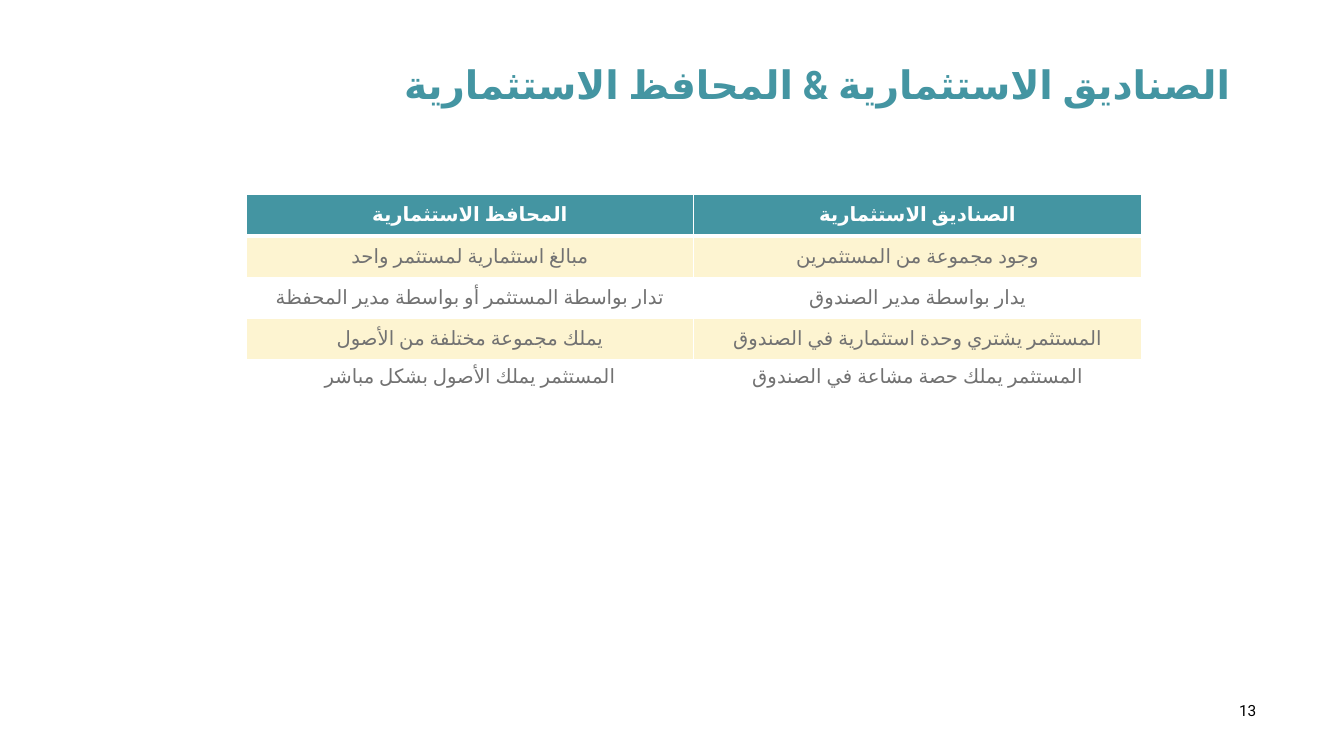
from dataclasses import dataclass

from lxml import etree
from pptx import Presentation
from pptx import util as u
from pptx.dml import color
from pptx.enum import lang, text as t
from pptx.oxml import ns


@dataclass(frozen=True)
class Theme:
    font: str = "Roboto"
    teal: str = "4495A2"
    gold: str = "F9D448"
    white: str = "FFFFFF"
    gray: str = "727272"
    black: str = "000000"
    title: int = 28
    body: int = 14
    small: int = 11


THEME = Theme()
ROWS = [
    ("المحافظ الاستثمارية", "الصناديق الاستثمارية"),
    ("مبالغ استثمارية لمستثمر واحد", "وجود مجموعة من المستثمرين"),
    ("تدار بواسطة المستثمر أو بواسطة مدير المحفظة", "يدار بواسطة مدير الصندوق"),
    ("يملك مجموعة مختلفة من الأصول", "المستثمر يشتري وحدة استثمارية في الصندوق"),
    ("المستثمر يملك الأصول بشكل مباشر", "المستثمر يملك حصة مشاعة في الصندوق"),
]
HEIGHTS = [0.41] * 4 + [0.32]


def apply(item, form):
    for name, value in form.items():
        setattr(item, name, value)


def add(parent, tag, **attrs):
    return etree.SubElement(parent, ns.qn(tag), **attrs)


def write(frame, words, size, tint, bold=False, align=t.PP_ALIGN.CENTER, rtl=True):
    para = frame.paragraphs[0]
    para.alignment = align
    run = para.add_run()
    run.text = words
    apply(run.font, {"name": THEME.font, "size": u.Pt(size), "bold": bold})
    run.font.color.rgb = color.RGBColor.from_string(tint)
    if rtl:
        para._p.get_or_add_pPr().set("rtl", "1")
        run.font.language_id = lang.MSO_LANGUAGE_ID.ARABIC
        add(run.font._element, "a:cs", typeface=THEME.font)


def add_label(slide, box, words, side, anchor, **form):
    frame = slide.shapes.add_textbox(*map(u.Inches, box)).text_frame
    apply(frame, {
        "word_wrap": True, "vertical_anchor": anchor,
        "margin_left": u.Inches(side), "margin_right": u.Inches(side),
        "margin_top": u.Inches(0.05), "margin_bottom": u.Inches(0.05),
    })
    write(frame, words, **form)


def paint(cell, tint, alpha=None):
    cell.fill.solid()
    cell.fill.fore_color.rgb = color.RGBColor.from_string(tint)
    if alpha:
        clr = cell._tc.tcPr.find(".//" + ns.qn("a:srgbClr"))
        add(clr, "a:alpha", val=str(alpha * 1000))


def edge(cell, top, bottom):
    """Draw white cell borders; they must stand before the fill."""
    props = cell._tc.get_or_add_tcPr()
    widths = {"L": 1, "R": 1, "T": top, "B": bottom}
    for spot, (side, width) in enumerate(widths.items()):
        line = add(props, f"a:ln{side}", w=str(u.Pt(width)))
        add(add(line, "a:solidFill"), "a:srgbClr", val=THEME.white)
        props.insert(spot, line)


def add_grid(slide, box):
    table = slide.shapes.add_table(len(ROWS), 2, *map(u.Inches, box)).table
    for col in table.columns:
        col.width = u.Inches(box[2] / 2)
    for r, (pair, height) in enumerate(zip(ROWS, HEIGHTS)):
        head = r == 0
        table.rows[r].height = u.Inches(height)
        for c, words in enumerate(pair):
            cell = table.cell(r, c)
            cell.vertical_anchor = t.MSO_ANCHOR.MIDDLE
            write(cell.text_frame, words, THEME.body,
                  THEME.white if head else THEME.gray, bold=head)
            if head:
                paint(cell, THEME.teal)
            else:
                paint(cell, THEME.gold if r % 2 else THEME.white, 25)
            edge(cell, 3 if r == 1 else 1, 3 if head else 1)


def main():
    deck = Presentation()
    apply(deck, {"slide_width": u.Inches(13.33), "slide_height": u.Inches(7.5)})
    slide = deck.slides.add_slide(deck.slide_layouts[6])
    add_label(slide, (3.74, 0.55, 8.51, 0.57),
              "الصناديق الاستثمارية & المحافظ الاستثمارية", 0.05, t.MSO_ANCHOR.TOP,
              size=THEME.title, tint=THEME.teal, bold=True, align=t.PP_ALIGN.RIGHT)
    add_grid(slide, (2.44, 1.93, 8.88, sum(HEIGHTS)))
    add_label(slide, (12.09, 6.91, 0.57, 0.27), "13", 0.1, t.MSO_ANCHOR.MIDDLE,
              size=THEME.small, tint=THEME.black, rtl=False)
    deck.save("out.pptx")


if __name__ == "__main__":
    main()
